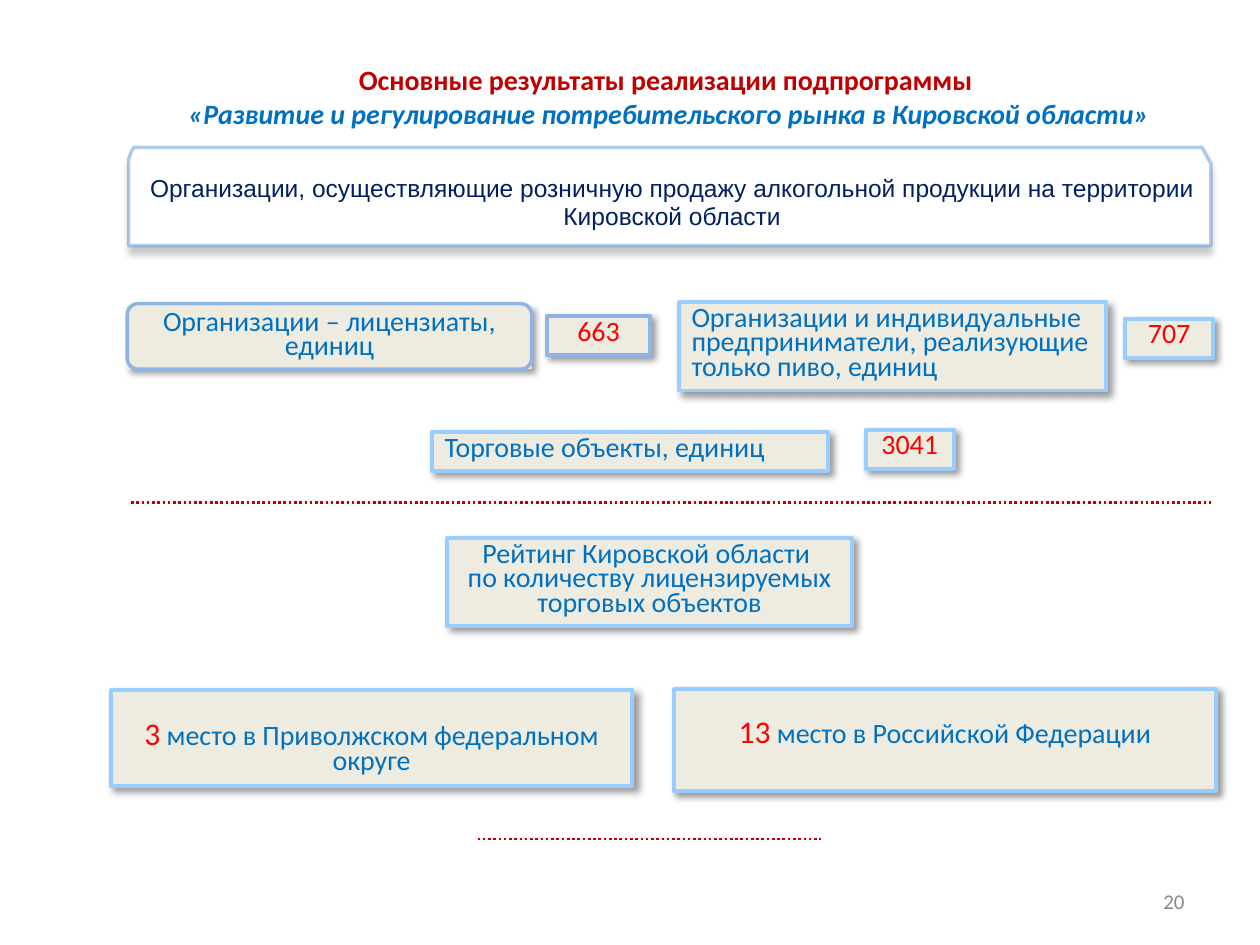
"""Slide on the results of the consumer market subprogramme in the Kirov region."""
from math import cos, pi, sin

from lxml.etree import SubElement
from pptx import Presentation
from pptx.dml.color import RGBColor
from pptx.enum.dml import MSO_LINE
from pptx.enum.shapes import MSO_CONNECTOR, MSO_SHAPE
from pptx.enum.text import MSO_ANCHOR, PP_ALIGN
from pptx.oxml.ns import qn
from pptx.util import Pt

PX = 9144
COLORS = dict(
    red="FF0000", crimson="C00000", blue="0070C0", navy="002060", grey="898989",
    beige="EEECE1", white="FFFFFF", sky="99CCFF", steel="8EB4E3", frame="558ED5",
)
LEFT, CENTER, RIGHT = PP_ALIGN.LEFT, PP_ALIGN.CENTER, PP_ALIGN.RIGHT
BOX_SHADOW = dict(blur=4, dist=3, angle=45, alpha=40)
FRAME_SHADOW = dict(blur=4, dist=4, angle=90, alpha=21)

CARDS = [
    ((101, 243, 321, 50), None, CENTER, 5, [("Организации – лицензиаты, единиц", 16, "blue")]),
    ((434, 251, 82, 31), "steel", CENTER, 5, [("663", 16, "red")]),
    ((539, 240, 339, 70), "sky", LEFT, 5,
     [("Организации и индивидуальные предприниматели, реализующие только пиво, единиц", 16, "blue")]),
    ((893, 253, 70, 31), "sky", CENTER, 5, [("707", 16, "red")]),
    ((343, 343, 314, 31), "sky", LEFT, 5, [("Торговые объекты, единиц", 16, "blue")]),
    ((687, 341, 70, 31), "sky", CENTER, 5, [("3041", 16, "red")]),
    ((355, 427, 321, 70), "sky", CENTER, 5,
     [("Рейтинг Кировской области ", 16, "blue"), "\n",
      ("по количеству лицензируемых торговых объектов", 16, "blue")]),
    ((88, 548, 414, 76), "sky", CENTER, 29,
     [("3", 18, "red"), (" место в Приволжском федеральном округе", 16, "blue")]),
    ((535, 547, 430, 81), "sky", CENTER, 29,
     [("13", 18, "red"), (" место в Российской Федерации", 16, "blue")]),
]
HEADING = [
    ("Основные результаты реализации подпрограммы ", "crimson", False),
    ("«Развитие и регулирование потребительского рынка в Кировской области»", "blue", True),
]
SUBJECT = ("Организации, осуществляющие розничную продажу алкогольной продукции "
           "на территории Кировской области")
DIVIDERS = [(104, 961, 399), (379, 652, 666)]
LICENSEE_OUTLINE = (101, 241, 321, 52)
FRAME_BOX = (102, 117, 859, 78)


def scaled(*lengths):
    return [length * PX for length in lengths]


def rgb(name):
    return RGBColor.from_string(COLORS[name])


def apply(target, **values):
    for name, value in values.items():
        setattr(target, name, value)


def paint(shape, fill, line, width=2.25):
    shape.shadow.inherit = False
    if fill:
        shape.fill.solid()
        shape.fill.fore_color.rgb = rgb(fill)
    else:
        shape.fill.background()
    if line:
        shape.line.color.rgb = rgb(line)
        shape.line.width = Pt(width)
    else:
        shape.line.fill.background()


def cast_shadow(shape, blur, dist, angle, alpha):
    effects = shape._element.spPr.find(qn("a:effectLst"))
    outer = SubElement(effects, qn("a:outerShdw"), blurRad=str(Pt(blur)), dist=str(Pt(dist)),
                       dir=str(angle * 60000), algn="tl", rotWithShape="0")
    tint = SubElement(outer, qn("a:srgbClr"), val="000000")
    SubElement(tint, qn("a:alpha"), val=str(alpha * 1000))


def write(paragraph, runs, align, font="Calibri", **layout):
    apply(paragraph, alignment=align, **layout)
    for run in runs:
        if run == "\n":
            paragraph.add_line_break()
            continue
        text, size, color, *style = run
        part = paragraph.add_run()
        part.text = text
        apply(part.font, name=font, size=Pt(size), **dict(zip(("bold", "italic"), style)))
        part.font.color.rgb = rgb(color)


def add_label(slide, box, anchor):
    frame = slide.shapes.add_textbox(*scaled(*box)).text_frame
    apply(frame, word_wrap=True, vertical_anchor=anchor)
    return frame


def add_frame(slide):
    left, top, width, height = FRAME_BOX
    right, bottom = left + width, top + height
    rx, ry, steps = 6, 13, 6
    corner = [(left + rx * (1 - cos(pi / 2 * i / steps)), top + ry * (1 - sin(pi / 2 * i / steps)))
              for i in range(steps + 1)]
    outline = corner + [(right - 7, top), (right, top + ry), (right, bottom), (left, bottom)]
    builder = slide.shapes.build_freeform(*outline[0], scale=PX)
    builder.add_line_segments(outline[1:], close=True)
    frame = builder.convert_to_shape()
    paint(frame, "white", "frame", 2)
    tint = frame.line._ln.find(qn("a:solidFill"))[0]
    SubElement(tint, qn("a:alpha"), val="46000")
    cast_shadow(frame, **FRAME_SHADOW)


def add_card(slide, box, line, align, top_inset, runs):
    card = slide.shapes.add_shape(MSO_SHAPE.RECTANGLE, *scaled(*box))
    paint(card, "beige", line)
    cast_shadow(card, **BOX_SHADOW)
    apply(card.text_frame, word_wrap=True, vertical_anchor=MSO_ANCHOR.TOP,
          margin_top=top_inset * PX)
    write(card.text_frame.paragraphs[0], runs, align, line_spacing=Pt(14), space_before=Pt(3.2))


def add_divider(slide, start, end, y):
    divider = slide.shapes.add_connector(MSO_CONNECTOR.STRAIGHT, *scaled(start, y, end, y))
    divider.line.color.rgb = rgb("crimson")
    apply(divider.line, width=Pt(1.5), dash_style=MSO_LINE.ROUND_DOT)
    SubElement(divider._element.spPr, qn("a:effectLst"))


def main():
    deck = Presentation()
    apply(deck, slide_width=1000 * PX, slide_height=750 * PX)
    slide = deck.slides.add_slide(deck.slide_layouts[6])

    add_frame(slide)
    subject = add_label(slide, (104, 122, 859, 78), MSO_ANCHOR.MIDDLE)
    write(subject.paragraphs[0], [(SUBJECT, 14, "navy")], CENTER, "Arial", line_spacing=Pt(16))
    for card in CARDS:
        add_card(slide, *card)
    outline = slide.shapes.add_shape(MSO_SHAPE.ROUNDED_RECTANGLE, *scaled(*LICENSEE_OUTLINE))
    paint(outline, None, "steel", 2)

    heading = add_label(slide, (88, 45, 886, 64), MSO_ANCHOR.TOP)
    for index, (text, color, italic) in enumerate(HEADING):
        paragraph = heading.add_paragraph() if index else heading.paragraphs[0]
        write(paragraph, [(text, 16, color, True, italic)], CENTER)
    for divider in DIVIDERS:
        add_divider(slide, *divider)
    page = add_label(slide, (717, 695, 233, 40), MSO_ANCHOR.MIDDLE)
    write(page.paragraphs[0], [("20", 12, "grey")], RIGHT)
    deck.save("out.pptx")


if __name__ == "__main__":
    main()
